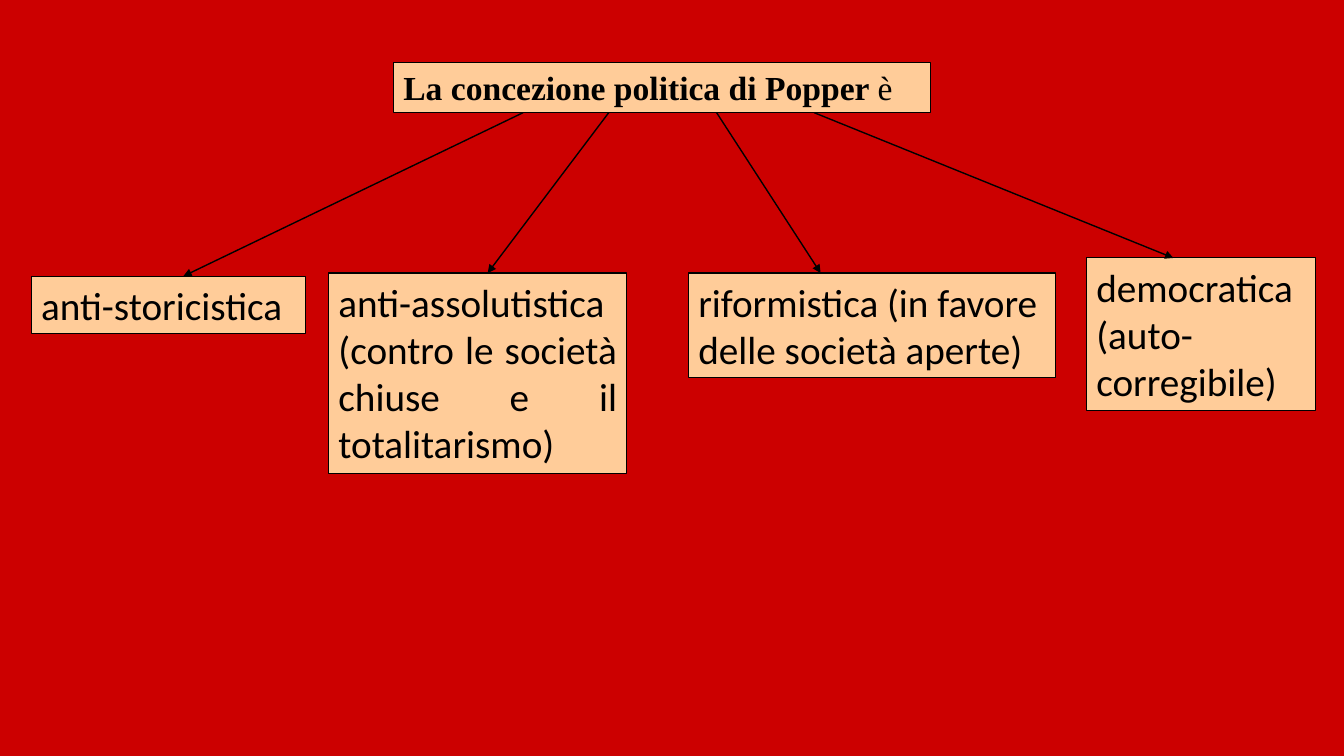
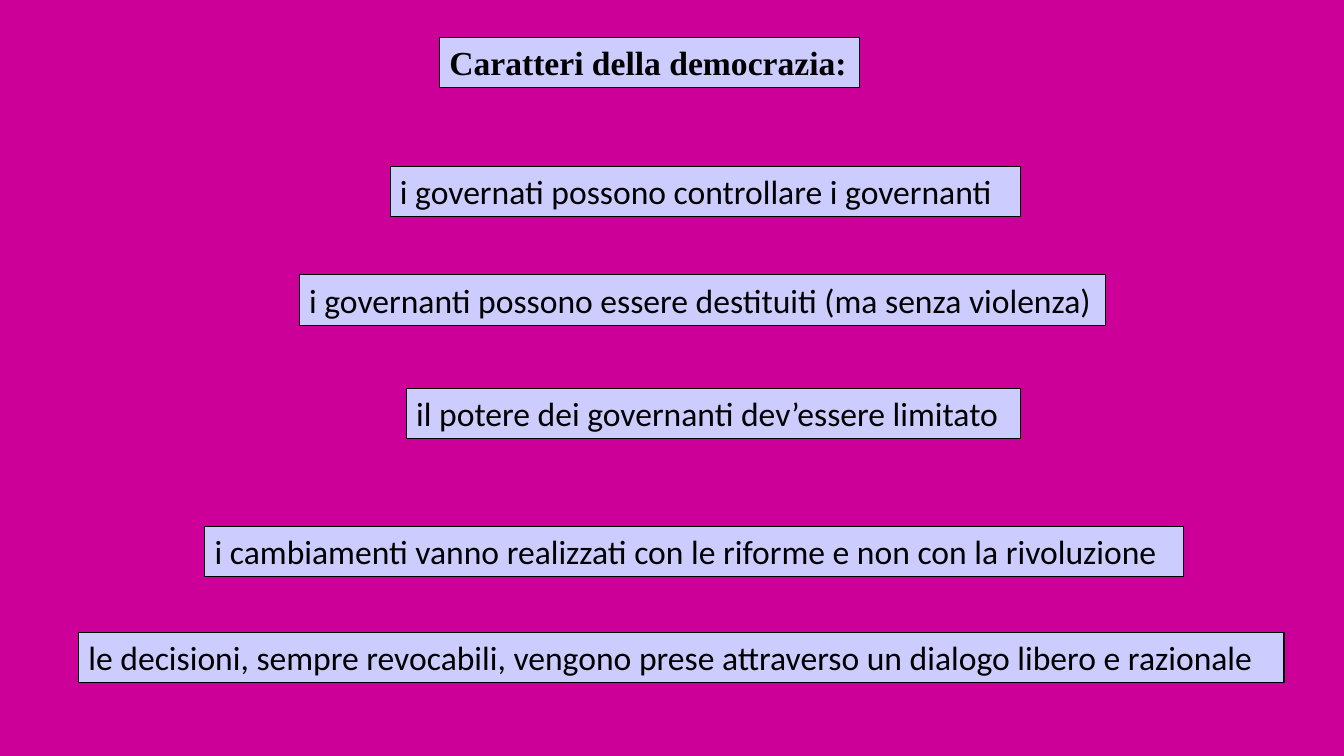
from dataclasses import dataclass

from lxml.etree import SubElement
from pptx import Presentation
from pptx.dml.color import RGBColor
from pptx.enum.shapes import MSO_CONNECTOR, MSO_SHAPE
from pptx.enum.text import MSO_ANCHOR, MSO_AUTO_SIZE, PP_ALIGN
from pptx.oxml.ns import qn
from pptx.util import Cm, Pt


@dataclass(frozen=True)
class Theme:
    ink: RGBColor = RGBColor(0x00, 0x00, 0x00)
    red: RGBColor = RGBColor(0xCC, 0x00, 0x00)
    peach: RGBColor = RGBColor(0xFF, 0xCC, 0x99)
    magenta: RGBColor = RGBColor(0xCC, 0x00, 0x99)
    lilac: RGBColor = RGBColor(0xCC, 0xCC, 0xFF)
    title_font: str = "Times New Roman"
    body_font: str = "Calibri"
    title_size: Pt = Pt(24)
    concept_size: Pt = Pt(28)
    trait_size: Pt = Pt(24)
    border: Pt = Pt(0.75)
    arrow: Pt = Pt(1)


class Deck:
    def __init__(self, theme):
        self.theme = theme
        self.prs = Presentation()
        self.prs.slide_width, self.prs.slide_height = Cm(33.87), Cm(19.05)

    def slide(self, background, panel):
        self.s = self.prs.slides.add_slide(self.prs.slide_layouts[5])
        self.panel = panel
        fill = self.s.background.fill
        fill.solid()
        fill.fore_color.rgb = background

    def frame(self, sp, align):
        sp.fill.solid()
        sp.fill.fore_color.rgb = self.panel
        sp.line.color.rgb = self.theme.ink
        sp.line.width = self.theme.border
        tf = sp.text_frame
        layout = {
            "word_wrap": True,
            "auto_size": MSO_AUTO_SIZE.NONE,
            "vertical_anchor": MSO_ANCHOR.TOP,
        }
        for name, value in layout.items():
            setattr(tf, name, value)
        p = tf.paragraphs[0]
        p.alignment = align
        return p

    def run(self, p, text, font, size, bold=False):
        r = p.add_run()
        r.text = text
        for name, value in {"name": font, "size": size, "bold": bold}.items():
            setattr(r.font, name, value)
        r.font.color.rgb = self.theme.ink

    def title(self, left, top, width, height, bold_text, plain_text=""):
        sp = self.s.shapes.title
        place = {"left": left, "top": top, "width": width, "height": height}
        for name, value in place.items():
            setattr(sp, name, Cm(value))
        p = self.frame(sp, PP_ALIGN.LEFT)
        for text, bold in ((bold_text, True), (plain_text, False)):
            if text:
                self.run(p, text, self.theme.title_font, self.theme.title_size, bold)

    def box(self, left, top, width, height, text, size, align=PP_ALIGN.LEFT):
        place = [Cm(v) for v in (left, top, width, height)]
        sp = self.s.shapes.add_shape(MSO_SHAPE.RECTANGLE, *place)
        sp.shadow.inherit = False
        self.run(self.frame(sp, align), text, self.theme.body_font, size)

    def arrow(self, *ends):
        line = self.s.shapes.add_connector(
            MSO_CONNECTOR.STRAIGHT, *[Cm(v) for v in ends])
        line.line.color.rgb = self.theme.ink
        line.line.width = self.theme.arrow
        SubElement(line.line._get_or_add_ln(), qn("a:tailEnd"), type="triangle")
        SubElement(line._element.spPr, qn("a:effectLst"))


def popper_slide(deck):
    theme = deck.theme
    deck.slide(theme.red, theme.peach)
    top, height = 1.57, 1.27
    deck.title(9.91, top, 13.54, height, "La concezione politica di Popper ", "è")
    left, justify = PP_ALIGN.LEFT, PP_ALIGN.JUSTIFY
    concepts = [
        (0.79, 6.96, 6.91, 1.45, "anti-storicistica", left, 13.18, 4.62),
        (8.28, 6.88, 7.52, 5.05,
         "anti-assolutistica (contro le società chiuse e il totalitarismo)",
         justify, 15.34, 12.29),
        (17.35, 6.88, 9.25, 2.64,
         "riformistica (in favore delle società aperte)", left, 18.06, 20.68),
        (27.38, 6.5, 5.77, 3.84,
         "democratica (auto-corregibile)", left, 20.52, 29.57),
    ]
    for x, y, w, h, text, align, start, end in concepts:
        deck.box(x, y, w, h, text, theme.concept_size, align)
        deck.arrow(start, top + height, end, y)


def democracy_slide(deck):
    theme = deck.theme
    deck.slide(theme.magenta, theme.lilac)
    height = 1.27
    deck.title(11.07, 0.94, 10.59, height, "Caratteri della democrazia:")
    traits = [
        (9.83, 4.19, 15.9, "i governati possono controllare i governanti"),
        (7.54, 6.93, 20.32,
         "i governanti possono essere destituiti (ma senza violenza)"),
        (10.24, 9.78, 15.49, "il potere dei governanti dev’essere limitato"),
        (5.16, 13.26, 24.66,
         "i cambiamenti vanno realizzati con le riforme e non con la rivoluzione"),
        (1.98, 15.93, 30.38,
         "le decisioni, sempre revocabili, vengono prese attraverso "
         "un dialogo libero e razionale"),
    ]
    for x, y, w, text in traits:
        deck.box(x, y, w, height, text, theme.trait_size)


def main():
    deck = Deck(Theme())
    popper_slide(deck)
    democracy_slide(deck)
    deck.prs.save("out.pptx")


if __name__ == "__main__":
    main()
